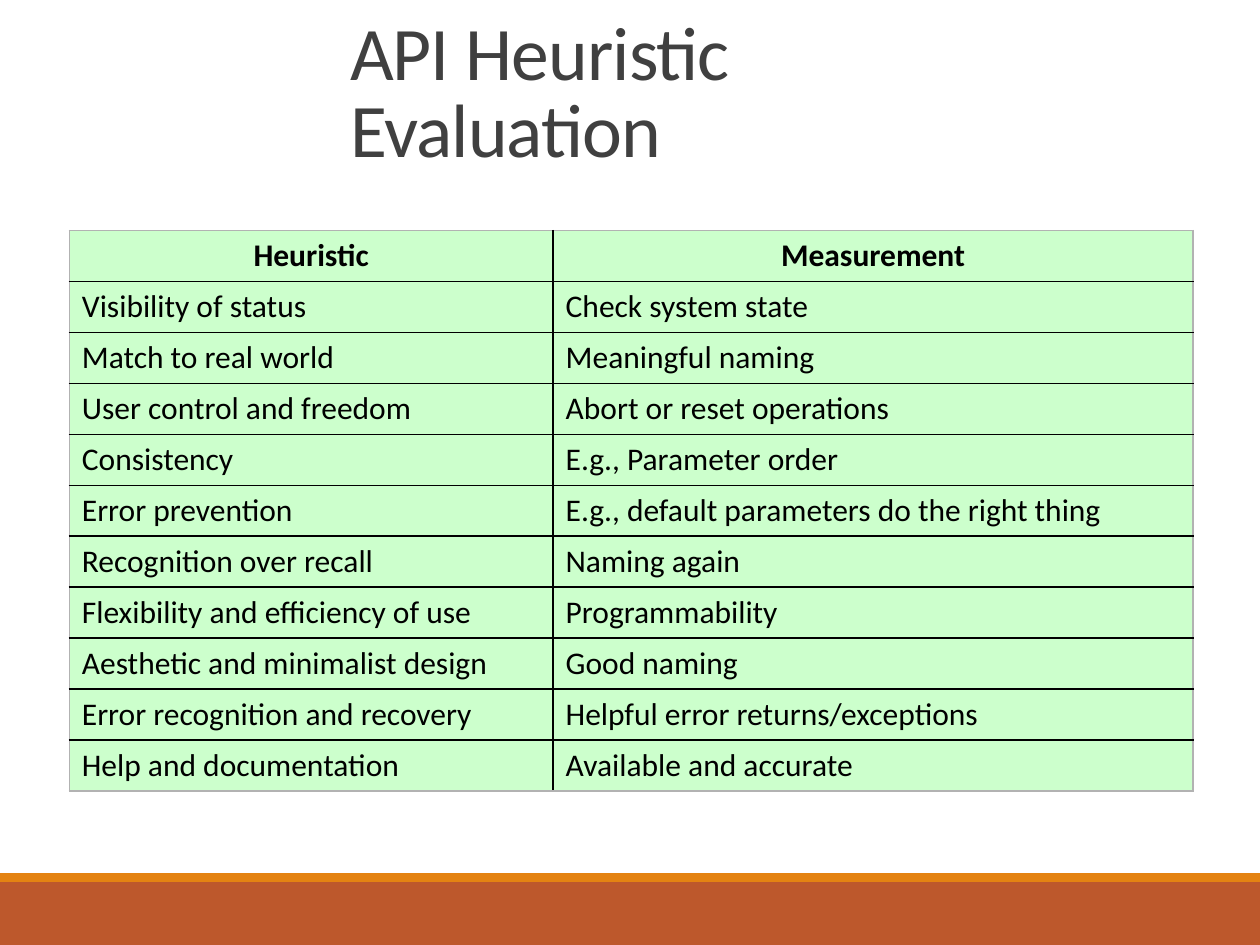
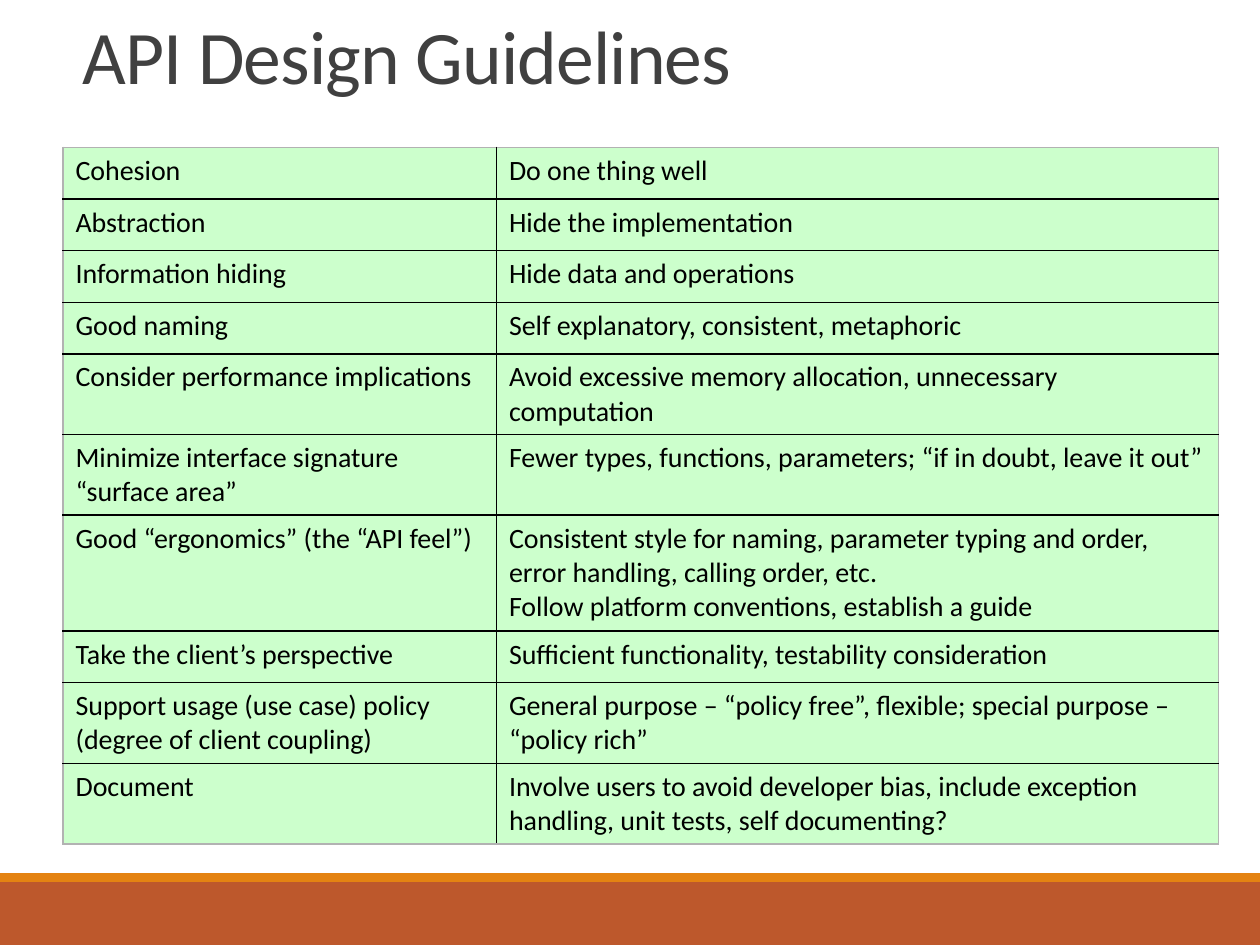
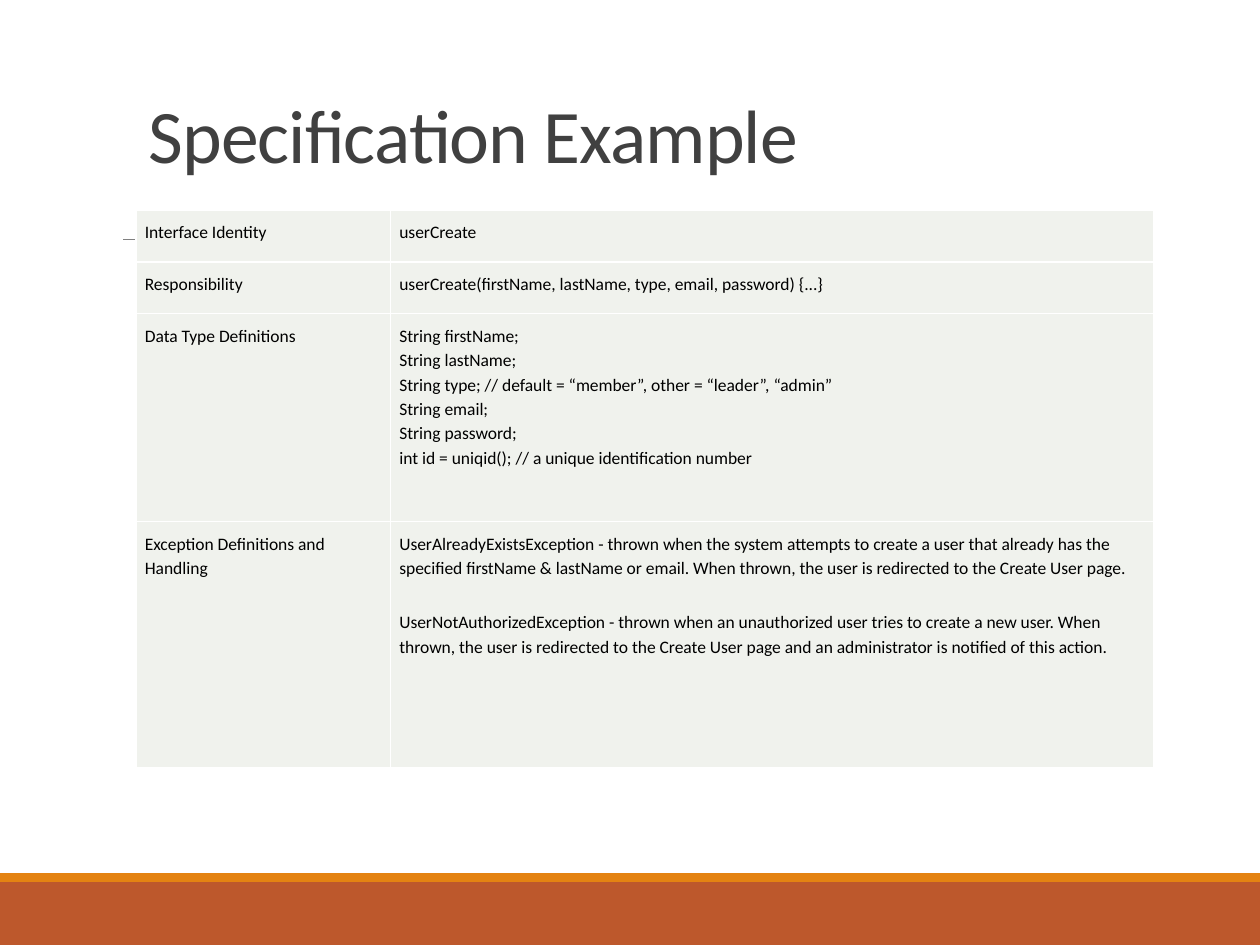
import pptx
import pptx.util
import pptx.dml.color
import pptx.enum.shapes
import pptx.enum.text
import pptx.oxml
import pptx.oxml.ns

Inch, Pt = pptx.util.Inches, pptx.util.Pt
Align, Anchor = pptx.enum.text.PP_ALIGN, pptx.enum.text.MSO_ANCHOR
WIDE, HIGH = 10, 7.5


class Theme:
    font = "Calibri"
    ink, title = "000000", "404040"
    band, strip, rule = "BD582C", "E48312", "808080"
    green, edge = "CCFFCC", "B2B2B2"
    pale, white = "F0F2ED", "FFFFFF"
    head, large, mid, small = 43.2, 18, 16, 10


GREEN = dict(fill=Theme.green, inner=Theme.ink, outer=Theme.edge)
PALE = dict(fill=Theme.pale, inner=Theme.white, outer=Theme.white,
            pad=0.07, lead=1.15)

HEURISTICS = [
    ("Heuristic", "Measurement"),
    ("Visibility of status", "Check system state"),
    ("Match to real world", "Meaningful naming"),
    ("User control and freedom", "Abort or reset operations"),
    ("Consistency", "E.g., Parameter order"),
    ("Error prevention", "E.g., default parameters do the right thing"),
    ("Recognition over recall", "Naming again"),
    ("Flexibility and efficiency of use", "Programmability"),
    ("Aesthetic and minimalist design", "Good naming"),
    ("Error recognition and recovery", "Helpful error returns/exceptions"),
    ("Help and documentation", "Available and accurate"),
]

GUIDES = [
    ("Cohesion", "Do one thing well"),
    ("Abstraction", "Hide the implementation"),
    ("Information hiding", "Hide data and operations"),
    ("Good naming", "Self explanatory, consistent, metaphoric"),
    ("Consider performance implications",
     "Avoid excessive memory allocation, unnecessary computation"),
    ("Minimize interface signature “surface area”",
     "Fewer types, functions, parameters; “if in doubt, leave it out”"),
    ("Good “ergonomics” (the “API feel”)",
     ["Consistent style for naming, parameter typing and order, "
      "error handling, calling order, etc.",
      "Follow platform conventions, establish a guide"]),
    ("Take the client’s perspective",
     "Sufficient functionality, testability consideration"),
    ("Support usage (use case) policy (degree of client coupling)",
     "General purpose – “policy free”, flexible; "
     "special purpose – “policy rich”"),
    ("Document",
     "Involve users to avoid developer bias, include exception handling, "
     "unit tests, self documenting?"),
]
LINES = (1, 1, 1, 1, 2, 2, 3, 1, 2, 2)
TALL = {1: 0.41, 2: 0.64, 3: 0.92}

SPEC = [
    ("Interface Identity", "userCreate"),
    ("Responsibility",
     "userCreate(firstName, lastName, type, email, password) {...}"),
    ("Data Type Definitions",
     ["String firstName;",
      "String lastName;",
      "String type; // default = “member”, other = “leader”, “admin”",
      "String email;",
      "String password;",
      "int id = uniqid(); // a unique identification number"]),
    ("Exception Definitions and Handling",
     ["UserAlreadyExistsException - thrown when the system attempts to "
      "create a user that already has the specified firstName & lastName "
      "or email. When thrown, the user is redirected to the Create User page.",
      "UserNotAuthorizedException - thrown when an unauthorized user tries "
      "to create a new user. When thrown, the user is redirected to the "
      "Create User page and an administrator is notified of this action."]),
]

SLIDES = [
    dict(title="API Heuristic Evaluation", box=(2.68, 0.91, 4.64, 0.51),
         rows=HEURISTICS, at=(0.55, 1.83), cols=(3.84, 5.08),
         tall=[4.45 / len(HEURISTICS)] * len(HEURISTICS),
         look=dict(GREEN, size=Theme.large, header=True)),
    dict(title="API Design Guidelines", box=(0.56, 0.2, 6.56, 0.64),
         rows=GUIDES, at=(0.5, 1.17), cols=(3.44, 5.73),
         tall=[TALL[n] for n in LINES],
         look=dict(GREEN, size=Theme.mid)),
    dict(title="Specification Example", box=(1.08, 0.91, 6.06, 0.56),
         rows=SPEC, at=(1.08, 1.67), cols=(2.02, 6.06),
         tall=(0.41, 0.41, 1.65, 1.95), rule=True,
         look=dict(PALE, size=Theme.small, gaps={3: 17})),
]


def tint(code):
    return pptx.dml.color.RGBColor.from_string(code)


def write(frame, text, size, color=Theme.ink, bold=False, align=Align.LEFT,
          lead=1.0, gap=0, track=0):
    """Fill a text frame; gap is the space between paragraphs in points."""
    frame.word_wrap = True
    parts = [text] if isinstance(text, str) else text
    for i, part in enumerate(parts):
        para = frame.add_paragraph() if i else frame.paragraphs[0]
        para.alignment, para.line_spacing = align, lead
        para.space_before = Pt(gap if i else 0)
        run = para.add_run()
        run.text = part
        font = run.font
        font.name, font.size, font.bold = Theme.font, Pt(size), bold
        font.color.rgb = tint(color)
        if track:
            run._r.get_or_add_rPr().set("spc", str(int(track * 100)))


def bar(slide, top, high, color):
    shape = slide.shapes.add_shape(
        pptx.enum.shapes.MSO_SHAPE.RECTANGLE,
        0, Inch(top), Inch(WIDE), Inch(high))
    shape.shadow.inherit = False
    shape.fill.solid()
    shape.fill.fore_color.rgb = tint(color)
    shape.line.fill.background()


def draw_rule(slide):
    line = slide.shapes.add_connector(
        pptx.enum.shapes.MSO_CONNECTOR.STRAIGHT,
        Inch(0.98), Inch(1.9), Inch(9.15), Inch(1.9))
    line.line.color.rgb = tint(Theme.rule)
    line.line.width = Pt(0.5)
    props = line._element.spPr
    props.append(props.makeelement(pptx.oxml.ns.qn("a:effectLst"), {}))


def border(cell, sides):
    """Put a one-point line on each side, before the fill as the schema asks."""
    props = cell._tc.get_or_add_tcPr()
    space = pptx.oxml.ns.nsdecls("a")
    for i, (side, color) in enumerate(sides.items()):
        props.insert(i, pptx.oxml.parse_xml(
            f'<a:ln{side} {space} w="12700"><a:solidFill>'
            f'<a:srgbClr val="{color}"/></a:solidFill></a:ln{side}>'))


def grid(slide, rows, at, cols, tall, fill, inner, outer, size,
         header=False, pad=None, lead=1.0, gaps=None):
    last, end = len(rows) - 1, len(cols) - 1
    table = slide.shapes.add_table(
        len(rows), len(cols), Inch(at[0]), Inch(at[1]),
        Inch(sum(cols)), Inch(sum(tall))).table
    table.first_row = table.horz_banding = False
    for col, width in zip(table.columns, cols):
        col.width = Inch(width)
    for r, row in enumerate(rows):
        table.rows[r].height = Inch(tall[r])
        top = header and r == 0
        for c, text in enumerate(row):
            cell = table.cell(r, c)
            cell.fill.solid()
            cell.fill.fore_color.rgb = tint(fill)
            if pad:
                cell.margin_left = cell.margin_right = Inch(pad)
                cell.margin_top = cell.margin_bottom = Inch(pad)
            border(cell, {"L": inner if c else outer,
                          "R": inner if c < end else outer,
                          "T": inner if r else outer,
                          "B": inner if r < last else outer})
            write(cell.text_frame, text, size, bold=top, lead=lead,
                  align=Align.CENTER if top else Align.LEFT,
                  gap=(gaps or {}).get(r, 0))


def build(deck, item):
    slide = deck.slides.add_slide(deck.slide_layouts[6])
    bar(slide, HIGH - 0.5, 0.5, Theme.band)
    bar(slide, HIGH - 0.57, 0.07, Theme.strip)
    if item.get("rule"):
        draw_rule(slide)
    frame = slide.shapes.add_textbox(*map(Inch, item["box"])).text_frame
    frame.vertical_anchor = Anchor.BOTTOM
    write(frame, item["title"], Theme.head, color=Theme.title,
          lead=0.85, track=-0.5)
    grid(slide, item["rows"], item["at"], item["cols"], item["tall"],
         **item["look"])


def main():
    deck = pptx.Presentation()
    deck.slide_width, deck.slide_height = Inch(WIDE), Inch(HIGH)
    for item in SLIDES:
        build(deck, item)
    deck.save("out.pptx")


if __name__ == "__main__":
    main()
